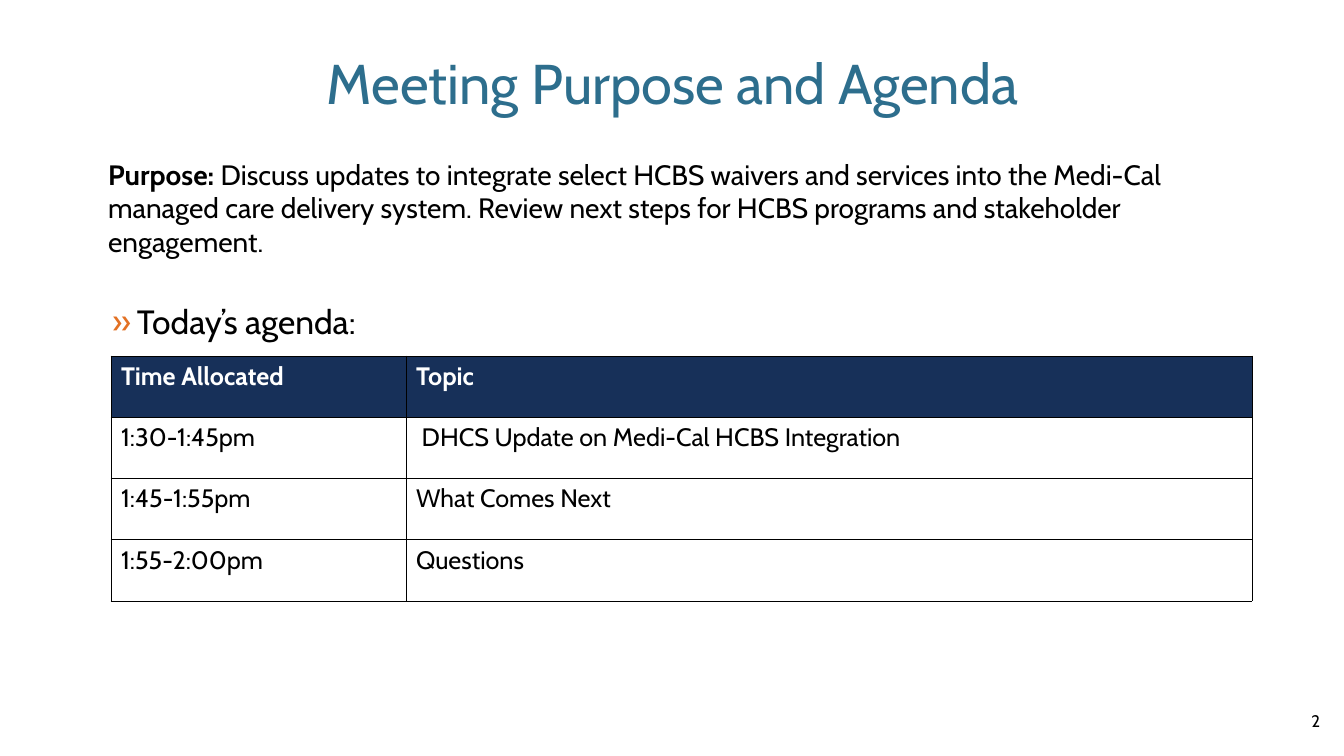
from lxml import etree
from pptx import Presentation
from pptx.dml.color import RGBColor
from pptx.enum.shapes import MSO_SHAPE
from pptx.enum.text import MSO_ANCHOR, PP_ALIGN
from pptx.oxml.ns import qn
from pptx.util import Pt

ROUNDED = MSO_SHAPE.ROUNDED_RECTANGLE
TOP, MIDDLE = MSO_ANCHOR.TOP, MSO_ANCHOR.MIDDLE
LEFT, CENTER, RIGHT = PP_ALIGN.LEFT, PP_ALIGN.CENTER, PP_ALIGN.RIGHT

TITLE = "Meeting Purpose and Agenda"
PURPOSE = [
    ("Purpose: ", True),
    ("Discuss updates to integrate select HCBS waivers and services into the "
     "Medi-Cal managed care delivery system. Review next steps for HCBS programs "
     "and stakeholder engagement.", False),
]
AGENDA_HEADING = "Today’s agenda:"
AGENDA = [
    ("Time Allocated", "Topic"),
    ("1:30-1:45pm", " DHCS Update on Medi-Cal HCBS Integration"),
    ("1:45-1:55pm", "What Comes Next"),
    ("1:55-2:00pm", "Questions"),
]
SLIDE_NUMBER = "2"

FONT = "Cabin"
COLORS = {"title": "2D6E8D", "text": "000000", "bullet": "E37124",
          "header": "173059", "white": "FFFFFF", "border": "000000"}

SLIDE_SIZE = (1344, 756)
TITLE_BOX = (93, 9, 1159, 146)
PURPOSE_BOX = (93, 155, 1159, 105)
HEADING_BOX = (102, 296, 1159, 329)
TABLE_BOX = (111, 356, 1141, 245)
NUMBER_BOX = (1028, 701, 302, 40)
COLUMN_WIDTHS = (295, 846)
BULLET_INDENT = 25
EMU_PER_PX = 914400 / 100.8


def emu(*lengths):
    return [round(length * EMU_PER_PX) for length in lengths]


def color(name):
    return RGBColor.from_string(COLORS[name])


def format_paragraph(paragraph, size, color_name="text", align=LEFT, bold=None):
    paragraph.alignment = align
    font = paragraph.font
    font.name, font.size, font.bold = FONT, Pt(size), bold
    font.color.rgb = color(color_name)


def add_text_box(slide, box, text):
    frame = slide.shapes.add_textbox(*emu(*box)).text_frame
    frame.word_wrap = True
    frame.text = text
    return frame


def add_title(slide):
    title = slide.shapes.title
    title.left, title.top, title.width, title.height = emu(*TITLE_BOX)
    title.text_frame.text = TITLE
    title.text_frame.vertical_anchor = MIDDLE
    format_paragraph(title.text_frame.paragraphs[0], 40, "title", CENTER)


def add_purpose(slide):
    shape = slide.shapes.add_shape(ROUNDED, *emu(*PURPOSE_BOX))
    shape.shadow.inherit = False
    shape.fill.background()
    shape.line.color.rgb = color("white")
    shape.line.width = Pt(0.5)
    shape.text_frame.vertical_anchor = MIDDLE
    paragraph = shape.text_frame.paragraphs[0]
    for text, bold in PURPOSE:
        run = paragraph.add_run()
        run.text, run.font.bold = text, bold
    format_paragraph(paragraph, 20)


def add_heading(slide):
    paragraph = add_text_box(slide, HEADING_BOX, AGENDA_HEADING).paragraphs[0]
    properties = paragraph._p.get_or_add_pPr()
    indent, = emu(BULLET_INDENT)
    properties.set("marL", str(indent))
    properties.set("indent", str(-indent))
    bullet_color = etree.SubElement(properties, qn("a:buClr"))
    etree.SubElement(bullet_color, qn("a:srgbClr"), val=COLORS["bullet"])
    etree.SubElement(properties, qn("a:buFont"), typeface=FONT)
    etree.SubElement(properties, qn("a:buChar"), char="»")
    paragraph.space_after = Pt(6)
    format_paragraph(paragraph, 24)


def add_borders(cell):
    properties = cell._tc.get_or_add_tcPr()
    for position, side in enumerate(("lnL", "lnR", "lnT", "lnB")):
        line = etree.Element(qn(f"a:{side}"), w=str(Pt(0.5)))
        fill = etree.SubElement(line, qn("a:solidFill"))
        etree.SubElement(fill, qn("a:srgbClr"), val=COLORS["border"])
        properties.insert(position, line)


def add_agenda(slide):
    frame = slide.shapes.add_table(len(AGENDA), len(COLUMN_WIDTHS), *emu(*TABLE_BOX))
    table = frame.table
    table.horz_banding = False
    for column, width in zip(table.columns, emu(*COLUMN_WIDTHS)):
        column.width = width
    for row_index, row in enumerate(AGENDA):
        header = row_index == 0
        for column_index, text in enumerate(row):
            cell = table.cell(row_index, column_index)
            cell.text = text
            cell.vertical_anchor = TOP
            cell.fill.solid()
            cell.fill.fore_color.rgb = color("header" if header else "white")
            add_borders(cell)
            format_paragraph(cell.text_frame.paragraphs[0], 18,
                             "white" if header else "text", bold=header)


def add_slide_number(slide):
    frame = add_text_box(slide, NUMBER_BOX, SLIDE_NUMBER)
    frame.vertical_anchor = MIDDLE
    format_paragraph(frame.paragraphs[0], 12, align=RIGHT)


def main():
    presentation = Presentation()
    presentation.slide_width, presentation.slide_height = emu(*SLIDE_SIZE)
    slide = presentation.slides.add_slide(presentation.slide_layouts[5])
    add_title(slide)
    add_purpose(slide)
    add_heading(slide)
    add_agenda(slide)
    add_slide_number(slide)
    presentation.save("out.pptx")


if __name__ == "__main__":
    main()
